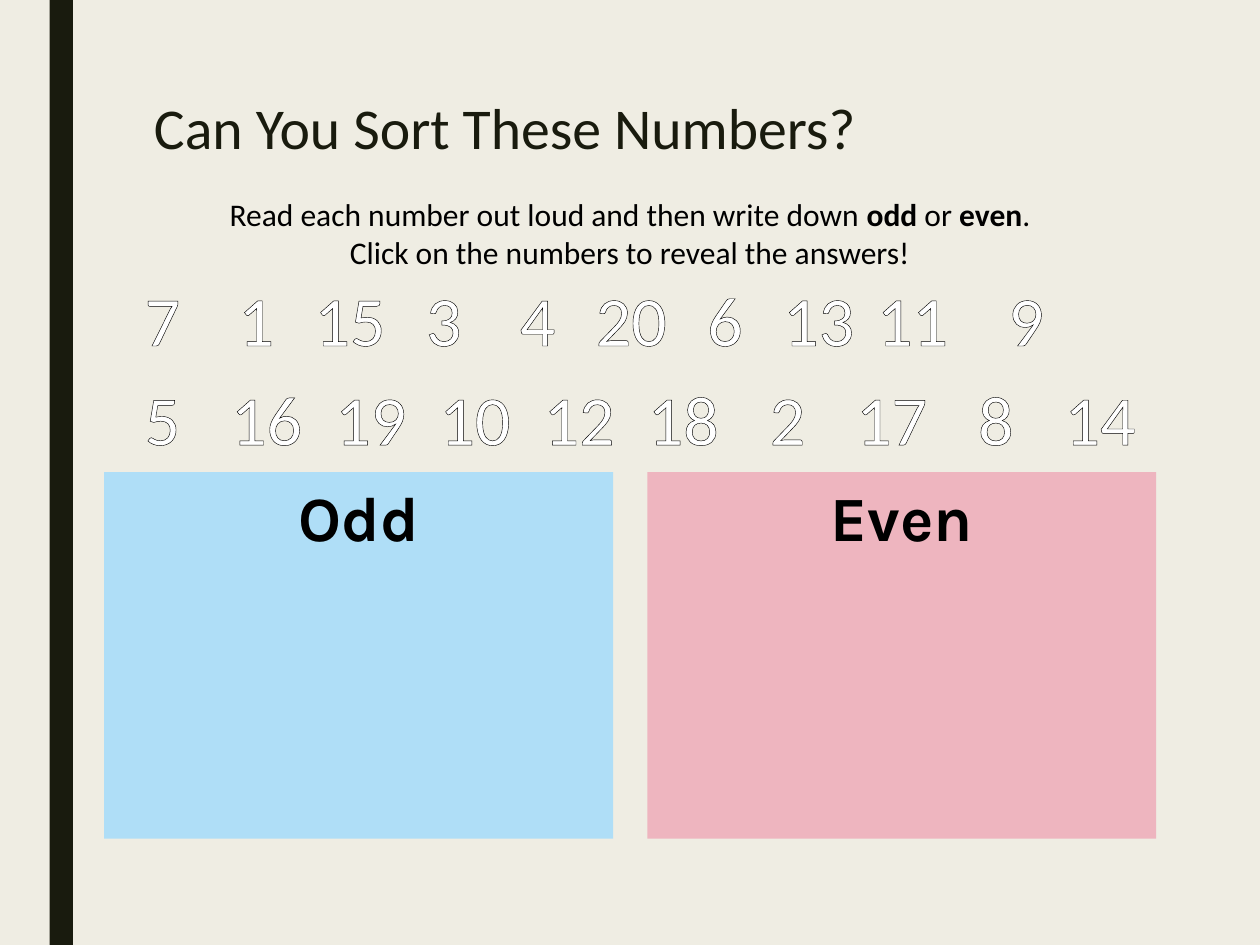
from dataclasses import dataclass

from lxml import etree
from pptx import Presentation
from pptx.dml.color import RGBColor
from pptx.enum.shapes import MSO_SHAPE as Shape
from pptx.enum.text import MSO_ANCHOR as Anchor, MSO_AUTO_SIZE as AutoSize, PP_ALIGN as Align
from pptx.oxml import parse_xml
from pptx.oxml.ns import nsdecls
from pptx.util import Cm, Pt


@dataclass(frozen=True)
class Theme:
    paper: str = "EFEDE3"
    dark: str = "191B0E"
    black: str = "000000"
    white: str = "FFFFFF"
    blue: str = "AFDEF7"
    pink: str = "EEB5BF"
    font: str = "Calibri"
    label_font: str = "Karla"
    title_size: int = 33
    body_size: int = 18
    label_size: int = 36
    number_size: int = 40


theme = Theme()


def style(paragraph, size, color, font=theme.font, align=Align.CENTER):
    paragraph.alignment = align
    paragraph.font.name = font
    paragraph.font.size = Pt(size)
    paragraph.font.color.rgb = RGBColor.from_string(color)


def add_block(left, top, width, height, color):
    block = slide.shapes.add_shape(Shape.RECTANGLE, Cm(left), Cm(top), Cm(width), Cm(height))
    block.shadow.inherit = False
    block.fill.solid()
    block.fill.fore_color.rgb = RGBColor.from_string(color)
    block.line.fill.background()
    return block


prs = Presentation()
prs.slide_width, prs.slide_height = Cm(25.4), Cm(19.05)
slide = prs.slides.add_slide(prs.slide_layouts[5])
slide.background.fill.solid()
slide.background.fill.fore_color.rgb = RGBColor.from_string(theme.paper)

# Side bar
add_block(1, 0, 0.47, 19.05, theme.dark)

# Title
title = slide.shapes.title
title.left, title.top, title.width, title.height = Cm(2.85), Cm(1.9), Cm(20), Cm(4.1)
title.text_frame.text = "Can You Sort These Numbers?"
title.text_frame.vertical_anchor = Anchor.TOP
heading = title.text_frame.paragraphs[0]
heading.line_spacing = 0.89
style(heading, theme.title_size, theme.dark, align=Align.LEFT)

# Instructions
instructions = slide.shapes.add_textbox(Cm(2.1), Cm(3.81), Cm(21.2), Cm(1.8)).text_frame
instructions.word_wrap = True
instructions.auto_size = AutoSize.SHAPE_TO_FIT_TEXT
task = instructions.paragraphs[0]
style(task, theme.body_size, theme.black)
for words, bold in [("Read each number out loud and then write down ", False), ("odd", True),
                    (" or ", False), ("even", True), (".", False)]:
    run = task.add_run()
    run.text = words
    run.font.bold = bold
hint = instructions.add_paragraph()
hint.text = "Click on the numbers to reveal the answers!"
style(hint, theme.body_size, theme.black)

# Sorting areas
for label, left, color in [("Odd", 2.1, theme.blue), ("Even", 13.05, theme.pink)]:
    area = add_block(left, 9.52, 10.26, 7.39, color).text_frame
    area.vertical_anchor = Anchor.TOP
    area.text = label
    style(area.paragraphs[0], theme.label_size, theme.black, theme.label_font)
    area.paragraphs[0].font.bold = True

# Outlined numbers in two evenly spaced rows; the last of the upper row stands further off
first_left, upper_step, lower_step = 2.12, 1.89, 2.1
upper_lefts = [first_left + upper_step * i for i in range(9)] + [19.53]
lower_lefts = [first_left + lower_step * i for i in range(10)]
rows = [(5.44, upper_lefts, [7, 1, 15, 3, 4, 20, 6, 13, 11, 9]),
        (7.44, lower_lefts, [5, 16, 19, 10, 12, 18, 2, 17, 8, 14])]
outline = (f'<a:ln {nsdecls("a")} w="9525"><a:solidFill>'
           f'<a:srgbClr val="{theme.black}"/></a:solidFill></a:ln>')
for top, lefts, numbers in rows:
    for left, number in zip(lefts, numbers):
        frame = slide.shapes.add_textbox(Cm(left), Cm(top), Cm(2.31), Cm(1.96)).text_frame
        frame.word_wrap = True
        frame.auto_size = AutoSize.SHAPE_TO_FIT_TEXT
        frame.text = str(number)
        digits = frame.paragraphs[0]
        style(digits, theme.number_size, theme.white)
        digits.runs[0]._r.get_or_add_rPr().insert(0, parse_xml(outline))

prs.save("out.pptx")
